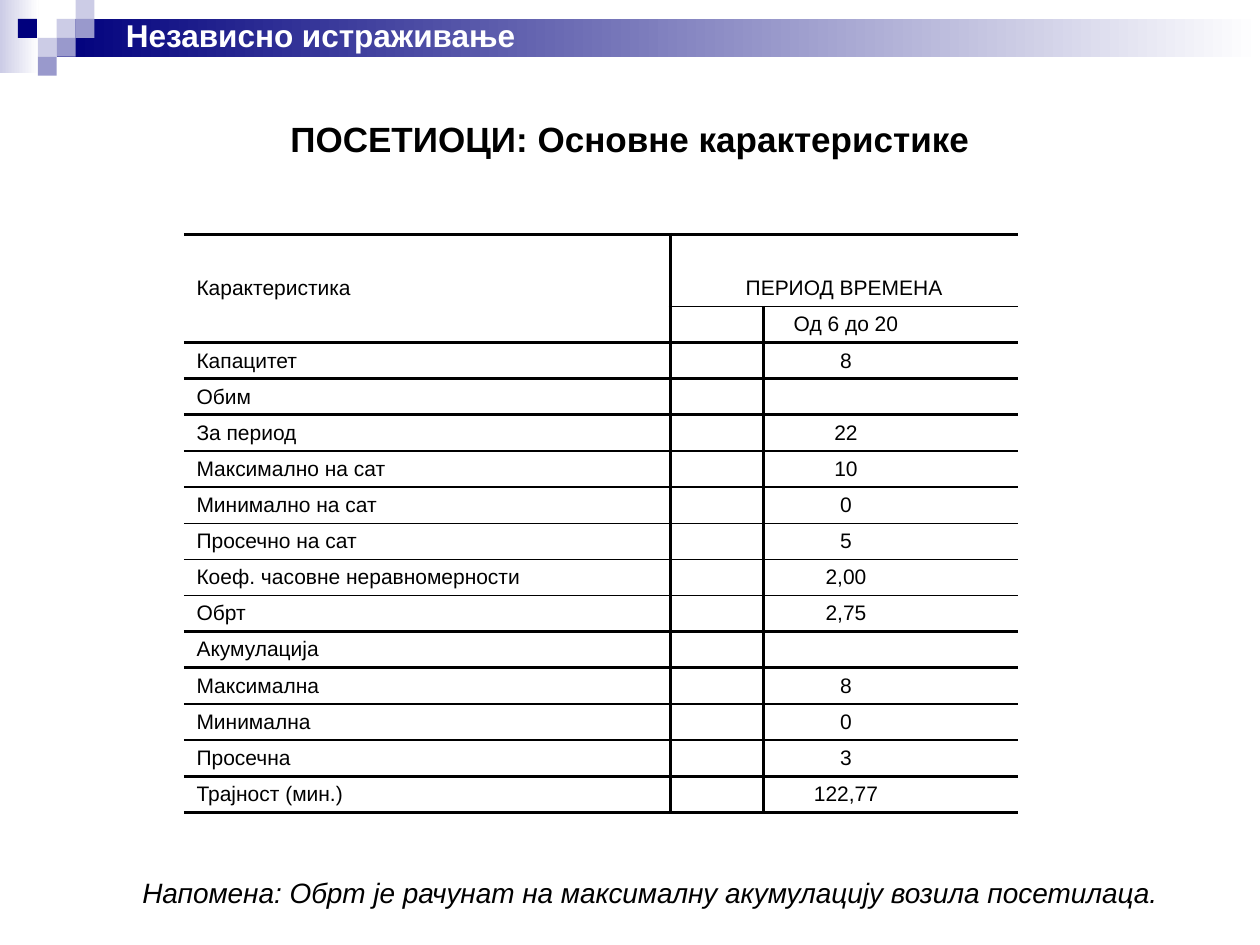
import lxml.etree
import pptx
import pptx.dml.color
import pptx.enum.shapes
import pptx.enum.text
import pptx.oxml.ns
import pptx.util

Inches = pptx.util.Inches
Pt = pptx.util.Pt
CENTER = pptx.enum.text.PP_ALIGN.CENTER
LEFT = pptx.enum.text.PP_ALIGN.LEFT
MIDDLE = pptx.enum.text.MSO_ANCHOR.MIDDLE
qn = pptx.oxml.ns.qn


def color(code):
    return pptx.dml.color.RGBColor.from_string(code)


def write(frame, text, size, align, code="000000", bold=False, italic=False):
    """Put one formatted run into the first paragraph of a text frame."""
    para = frame.paragraphs[0]
    para.alignment = align
    span = para.add_run()
    span.text = text
    span.font.name = "Arial"
    span.font.size = Pt(size)
    span.font.bold = bold
    span.font.italic = italic
    span.font.color.rgb = color(code)


deck = pptx.Presentation()
deck.slide_width, deck.slide_height = Inches(10), Inches(7.5)
page = deck.slides.add_slide(deck.slide_layouts[6])

# Header band and mosaic: column, row, width, height in squares, then colours
SQUARE = 0.15
NAVY, LAVENDER, VIOLET, WHITE = "00007D", "CCCCE6", "9999CC", "FFFFFF"
mosaic = [
    (0, 0, 2.05, 3.87, [LAVENDER, WHITE]),
    (3, 1, 63.67, 2, [NAVY, WHITE]),
    (3, 1, 1, 1, [LAVENDER]),
    (4, 0, 1, 1, [LAVENDER]),
    (4, 1, 1, 1, [VIOLET]),
    (2, 2, 1, 1, [LAVENDER]),
    (0.95, 1, 1, 1, [NAVY]),
    (3, 2, 1, 1, [VIOLET]),
    (2, 3, 1, 1, [VIOLET]),
]
for column, row, width, height, codes in mosaic:
    block = page.shapes.add_shape(
        pptx.enum.shapes.MSO_SHAPE.RECTANGLE,
        *[Inches(SQUARE * n) for n in (column, row, width, height)])
    block.shadow.inherit = False
    block.line.fill.background()
    if len(codes) == 1:
        block.fill.solid()
        block.fill.fore_color.rgb = color(codes[0])
    else:
        block.fill.gradient()
        block.fill.gradient_angle = 0
        for stop, code in zip(block.fill.gradient_stops, codes):
            stop.color.rgb = color(code)

# Title, note and header text
texts = [
    (0.5, 0.5, 9, 1.2, "ПОСЕТИОЦИ: Основне карактеристике", 20, CENTER,
     "000000", True, False),
    (0.67, 6.9, 8.98, 0.37,
     "Напомена: Обрт је рачунат на максималну акумулацију возила посетилаца.",
     16, CENTER, "000000", False, True),
    (0.9, 0.08, 5.59, 0.4, "Независно истраживање", 18, LEFT, WHITE, True, False),
]
for left, top, width, height, *content in texts:
    box = page.shapes.add_textbox(*map(Inches, (left, top, width, height)))
    box.text_frame.word_wrap = True
    box.text_frame.vertical_anchor = MIDDLE
    write(box.text_frame, *content)

# Table rows: label, value, width of the rule below
THIN, THICK = 1, 2
records = [
    ("", "", 0),
    ("Карактеристика", "ПЕРИОД ВРЕМЕНА", THIN),
    ("", "Од 6 до 20", THICK),
    ("Капацитет", "8", THICK),
    ("Обим", "", THICK),
    ("За период", "22", THIN),
    ("Максимално на сат", "10", THIN),
    ("Минимално на сат", "0", THIN),
    ("Просечно на сат", "5", THIN),
    ("Коеф. часовне неравномерности", "2,00", THIN),
    ("Обрт", "2,75", THICK),
    ("Акумулација", "", THICK),
    ("Максимална", "8", THIN),
    ("Минимална", "0", THIN),
    ("Просечна", "3", THICK),
    ("Трајност (мин.)", "122,77", THICK),
]
widths = [3.86, 0.74, 1.31, 0.71]
TABLE_HEIGHT = 4.59
frame = page.shapes.add_table(
    len(records), len(widths), Inches(1.46), Inches(1.86),
    Inches(sum(widths)), Inches(TABLE_HEIGHT))
table = frame.table
table.first_row = table.horz_banding = False
NO_STYLE_NO_GRID = "{2D5ABB26-0587-4C30-8999-92F81FD0307C}"
frame._element.find(".//" + qn("a:tableStyleId")).text = NO_STYLE_NO_GRID

for column, width in zip(table.columns, widths):
    column.width = Inches(width)
for line in table.rows:
    line.height = Inches(TABLE_HEIGHT / len(records))
for row in (0, 1):
    table.cell(row, 1).merge(table.cell(row, 3))

for row, (label, value, below) in enumerate(records):
    above = records[row - 1][2] if row else THICK
    value_column = 1 if row < 2 else 2
    for column in range(len(widths)):
        cell = table.cell(row, column)
        cell.margin_top = cell.margin_bottom = Inches(0.04)
        cell.vertical_anchor = MIDDLE
        text = {0: label, value_column: value}.get(column, "")
        if text:
            write(cell.text_frame, text, 12, LEFT if column == 0 else CENTER)
        else:
            lxml.etree.SubElement(
                cell.text_frame.paragraphs[0]._p, qn("a:endParaRPr"), sz="1200")

        # The label of the header stands beside two rows without a rule
        borders = {
            "a:lnL": THICK if column == 1 else 0,
            "a:lnR": THICK if column == 0 else 0,
            "a:lnT": 0 if column == 0 and row == 2 else above,
            "a:lnB": 0 if column == 0 and row == 1 else below,
        }
        properties = cell._tc.get_or_add_tcPr()
        for tag, weight in borders.items():
            if weight:
                border = lxml.etree.SubElement(properties, qn(tag), w=str(Pt(weight)))
                paint = lxml.etree.SubElement(border, qn("a:solidFill"))
                lxml.etree.SubElement(paint, qn("a:srgbClr"), val="000000")
        cell.fill.background()

deck.save("out.pptx")
